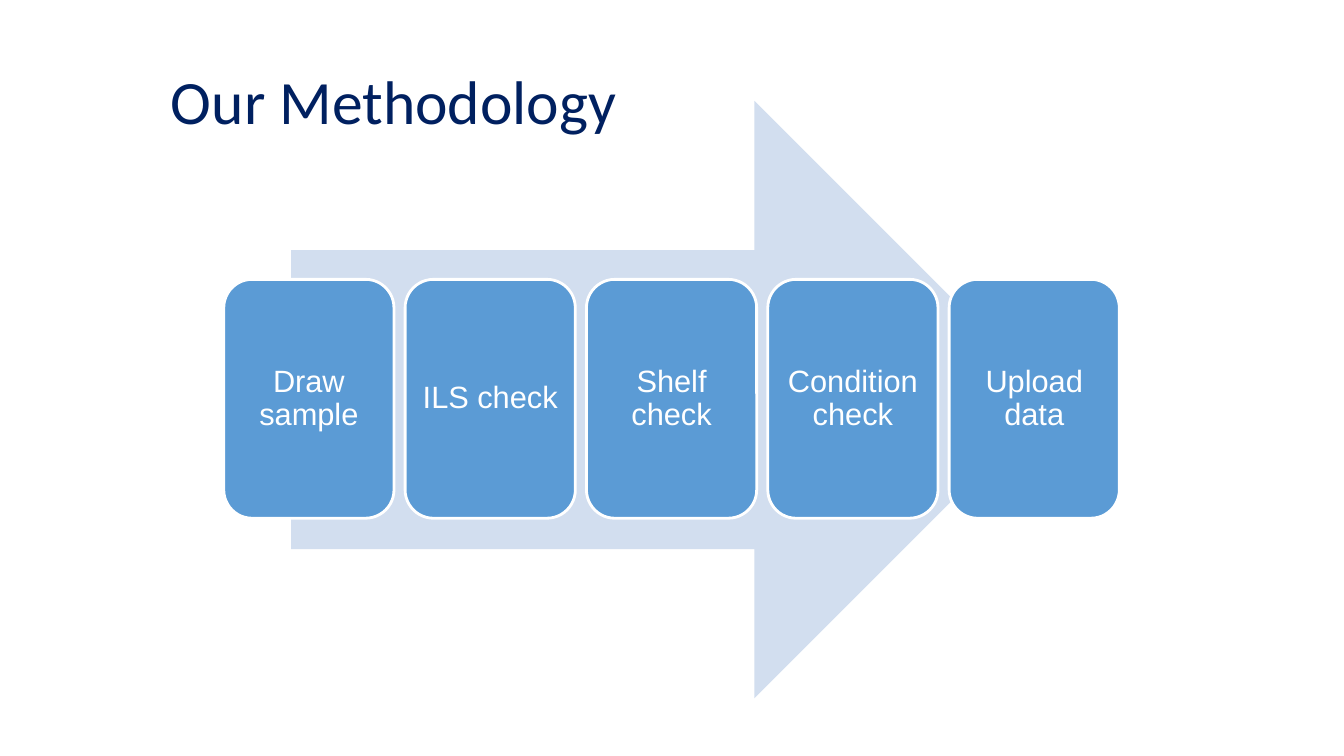
from dataclasses import dataclass

from pptx import Presentation
from pptx.dml.color import RGBColor
from pptx.enum.shapes import MSO_SHAPE as Shape
from pptx.enum.text import MSO_ANCHOR as Anchor, MSO_AUTO_SIZE as AutoSize, PP_ALIGN as Align
from pptx.shapes.autoshape import Shape as AutoShape
from pptx.slide import Slide
from pptx.text.text import _Paragraph as Paragraph
from pptx.util import Cm, Pt


@dataclass(frozen=True)
class Theme:
    navy: RGBColor = RGBColor(0x00, 0x20, 0x60)
    blue: RGBColor = RGBColor(0x5B, 0x9B, 0xD5)
    pale_blue: RGBColor = RGBColor(0xD2, 0xDE, 0xEF)
    white: RGBColor = RGBColor(0xFF, 0xFF, 0xFF)
    title_font: str = "Calibri"
    step_font: str = "Arial"
    title_size: Pt = Pt(44)
    step_size: Pt = Pt(22)
    outline: Pt = Pt(2)


@dataclass(frozen=True)
class Box:
    left: float
    top: float
    width: float
    height: float

    def lengths(self) -> tuple[Cm, Cm, Cm, Cm]:
        return Cm(self.left), Cm(self.top), Cm(self.width), Cm(self.height)


@dataclass(frozen=True)
class Step:
    label: str
    box: Box


THEME = Theme()
TITLE_BOX = Box(4.06, 1.45, 12.32, 2.13)
ARROW_BOX = Box(7.34, 2.54, 19.2, 15.06)
STEP_PITCH = 4.57
LABELS = ("Draw sample", "ILS check", "Shelf check", "Condition check", "Upload data")
STEPS = [Step(label, Box(5.64 + i * STEP_PITCH, 7.04, 4.29, 6.02))
         for i, label in enumerate(LABELS)]


def add_run(p: Paragraph, text: str, font: str, size: Pt, color: RGBColor) -> None:
    r = p.add_run()
    r.text = text
    r.font.name = font
    r.font.size = size
    r.font.color.rgb = color


def add_filled(s: Slide, kind: Shape, box: Box, fill: RGBColor) -> AutoShape:
    sp = s.shapes.add_shape(kind, *box.lengths())
    sp.shadow.inherit = False
    sp.fill.solid()
    sp.fill.fore_color.rgb = fill
    sp.line.fill.background()
    return sp


def add_step(s: Slide, step: Step) -> None:
    sp = add_filled(s, Shape.ROUNDED_RECTANGLE, step.box, THEME.blue)
    sp.line.color.rgb = THEME.white
    sp.line.width = THEME.outline
    tf = sp.text_frame
    tf.word_wrap = True
    tf.vertical_anchor = Anchor.MIDDLE
    tf.margin_left = tf.margin_right = tf.margin_top = tf.margin_bottom = Cm(0.23)
    p = tf.paragraphs[0]
    p.alignment = Align.CENTER
    p.line_spacing = 0.9
    add_run(p, step.label, THEME.step_font, THEME.step_size, THEME.white)


def add_title(s: Slide, text: str) -> None:
    tf = s.shapes.add_textbox(*TITLE_BOX.lengths()).text_frame
    tf.word_wrap = False
    tf.auto_size = AutoSize.SHAPE_TO_FIT_TEXT
    p = tf.paragraphs[0]
    p.alignment = Align.LEFT
    add_run(p, text, THEME.title_font, THEME.title_size, THEME.navy)


def main() -> None:
    prs = Presentation()
    prs.slide_width, prs.slide_height = Cm(33.87), Cm(19.05)
    s = prs.slides.add_slide(prs.slide_layouts[6])

    # Process arrow behind the steps
    add_filled(s, Shape.RIGHT_ARROW, ARROW_BOX, THEME.pale_blue)

    # Steps, left to right
    for step in STEPS:
        add_step(s, step)

    # Title
    add_title(s, "Our Methodology")

    prs.save("out.pptx")


if __name__ == "__main__":
    main()
